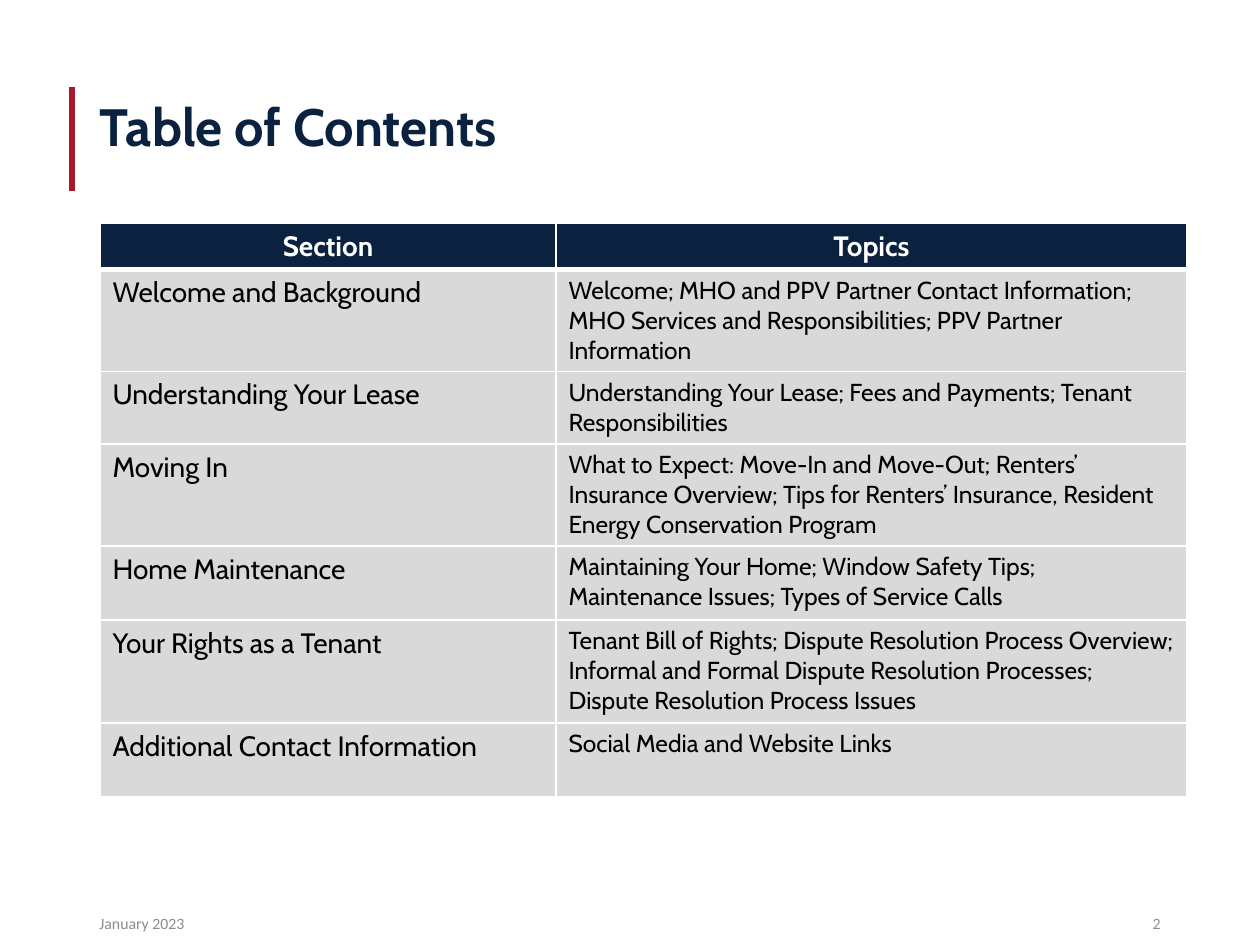
from lxml.etree import SubElement
from pptx import Presentation
from pptx.dml.color import RGBColor as RGB
from pptx.enum.text import MSO_ANCHOR as ANCHOR, PP_ALIGN as ALIGN
from pptx.oxml.ns import qn
from pptx.util import Emu, Pt

PX = 914400 / 126
COLORS = {"navy": "0A2240", "red": "AA182C", "white": "FFFFFF",
          "gray": "D9D9D9", "black": "000000", "muted": "8C8C8C"}
TITLE = {"name": "Cabin", "size": Pt(30), "bold": True, "color": "navy"}
HEADING = {"name": "Cabin", "size": Pt(16), "bold": True, "color": "white"}
SECTION = {"name": "Cabin", "size": Pt(16), "bold": False, "color": "black"}
TOPICS = {**SECTION, "size": Pt(14)}
FOOTER = {"name": "Calibri", "size": Pt(9), "bold": False, "color": "muted"}
COLUMN_WIDTHS = (456, 631)
HEADINGS = ("Section", "Topics")
HEADING_HEIGHT = 44
CONTENTS = (
    (98, "Welcome and Background",
     "Welcome; MHO and PPV Partner Contact Information; MHO Services and "
     "Responsibilities; PPV Partner Information"),
    (67, "Understanding Your Lease",
     "Understanding Your Lease; Fees and Payments; Tenant Responsibilities"),
    (94, "Moving In",
     "What to Expect: Move-In and Move-Out; Renters’ Insurance Overview; "
     "Tips for Renters’ Insurance, Resident Energy Conservation Program"),
    (74, "Home Maintenance",
     "Maintaining Your Home; Window Safety Tips; Maintenance Issues; "
     "Types of Service Calls"),
    (103, "Your Rights as a Tenant",
     "Tenant Bill of Rights; Dispute Resolution Process Overview; Informal "
     "and Formal Dispute Resolution Processes; Dispute Resolution Process Issues"),
    (74, "Additional Contact Information", "Social Media and Website Links"),
)


def px(length):
    return Emu(round(length * PX))


def rgb(color):
    return RGB.from_string(COLORS[color])


def write(frame, words, style, align=ALIGN.LEFT):
    paragraph = frame.paragraphs[0]
    paragraph.alignment = align
    run = paragraph.add_run()
    run.text = words
    for key, value in style.items():
        if key == "color":
            run.font.color.rgb = rgb(value)
        else:
            setattr(run.font, key, value)
    return paragraph


def add_heading(slide, left, top, width, height):
    rule = slide.shapes.add_connector(1, px(left), px(top), px(left), px(top + height))
    rule.line.color.rgb = rgb("red")
    rule.line.width = Pt(3)
    SubElement(rule.element.spPr, qn("a:effectLst"))

    title = slide.shapes.title
    place = {"left": left + 15, "top": top + 8, "width": width - 15, "height": 81}
    for key, value in place.items():
        setattr(title, key, px(value))
    title.text_frame.vertical_anchor = ANCHOR.TOP
    write(title.text_frame, "Table of Contents", TITLE).line_spacing = 0.9


def set_borders(cell, bottom):
    properties = cell._tc.get_or_add_tcPr()
    for index, (side, points) in enumerate(
            (("L", 1), ("R", 1), ("T", 1), ("B", bottom))):
        line = properties.makeelement(qn(f"a:ln{side}"), {"w": str(Pt(points))})
        fill = SubElement(line, qn("a:solidFill"))
        SubElement(fill, qn("a:srgbClr"), val=COLORS["white"])
        properties.insert(index, line)


def fill_row(table, index, height, words, styles, background, align, bottom=1):
    table.rows[index].height = px(height)
    for cell, text, style in zip(table.rows[index].cells, words, styles):
        cell.fill.solid()
        cell.fill.fore_color.rgb = rgb(background)
        set_borders(cell, bottom)
        write(cell.text_frame, text, style, align)


def add_contents(slide, left, top):
    height = HEADING_HEIGHT + sum(row[0] for row in CONTENTS)
    table = slide.shapes.add_table(
        len(CONTENTS) + 1, len(COLUMN_WIDTHS), px(left), px(top),
        px(sum(COLUMN_WIDTHS)), px(height)).table
    for column, width in zip(table.columns, COLUMN_WIDTHS):
        column.width = px(width)
    fill_row(table, 0, HEADING_HEIGHT, HEADINGS, (HEADING, HEADING),
             "navy", ALIGN.CENTER, 3)
    for index, (row_height, *words) in enumerate(CONTENTS, 1):
        fill_row(table, index, row_height, words, (SECTION, TOPICS),
                 "gray", ALIGN.LEFT)


def add_footer(slide, left, top, width, height):
    box_width = 284
    for x, words, align in ((left, "January 2023", ALIGN.LEFT),
                            (left + width - box_width, "2", ALIGN.RIGHT)):
        box = slide.shapes.add_textbox(px(x), px(top), px(box_width), px(height))
        box.text_frame.word_wrap = True
        write(box.text_frame, words, FOOTER, align)


def main():
    deck = Presentation()
    deck.slide_width, deck.slide_height = px(1260), px(945)
    slide = deck.slides.add_slide(deck.slide_layouts[5])
    add_heading(slide, 72, 87, 1101, 104)
    add_contents(slide, 100, 223)
    add_footer(slide, 87, 908, 1086, 50)
    deck.save("out.pptx")


if __name__ == "__main__":
    main()
